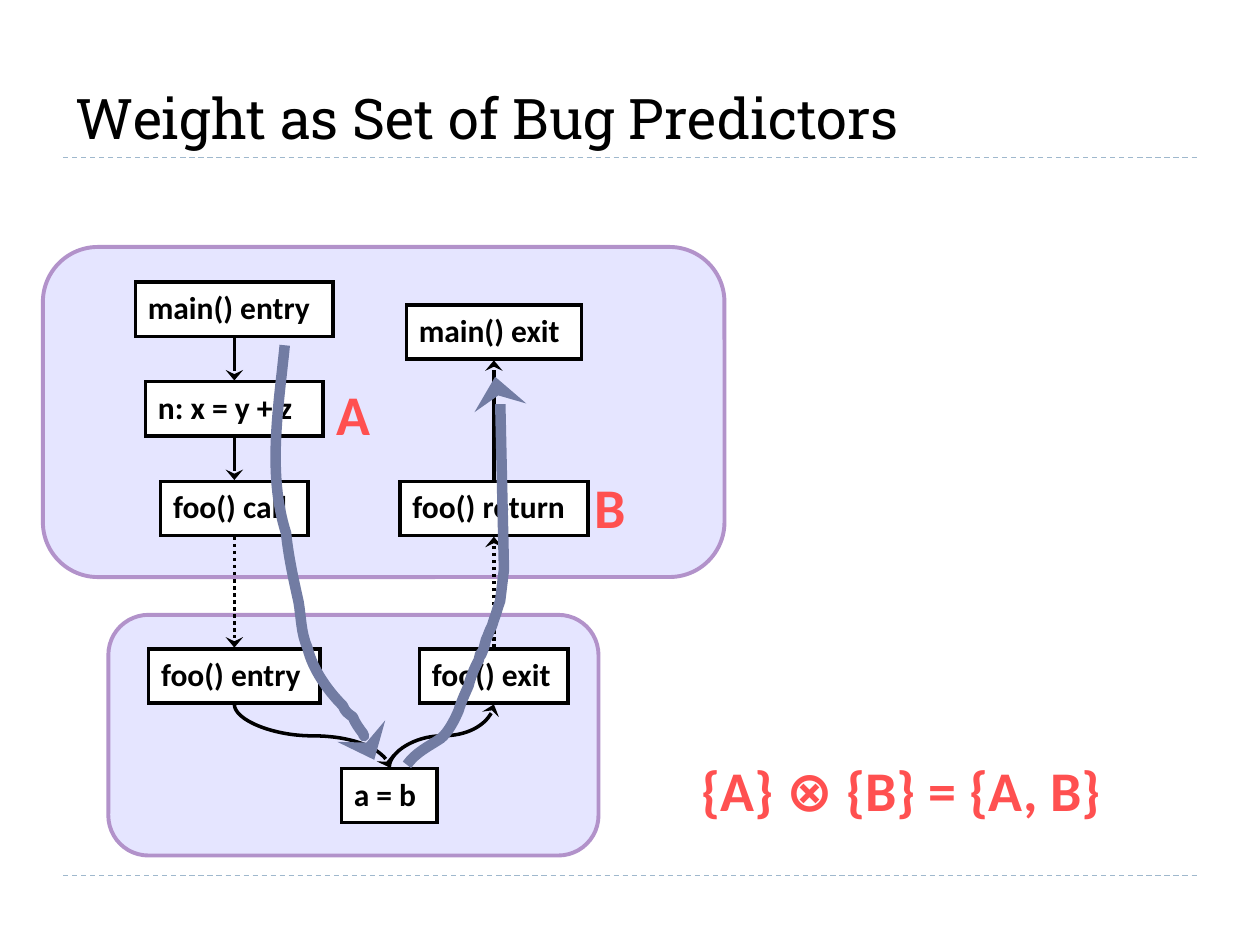
from lxml import etree
from pptx import Presentation
from pptx.dml.color import RGBColor
from pptx.enum.dml import MSO_LINE
from pptx.enum.shapes import MSO_CONNECTOR, MSO_SHAPE
from pptx.enum.text import MSO_ANCHOR, MSO_AUTO_SIZE, PP_ALIGN
from pptx.oxml.ns import qn
from pptx.util import Inches, Pt

STRAIGHT, CURVE = MSO_CONNECTOR.STRAIGHT, MSO_CONNECTOR.CURVE
DASH, DOT = MSO_LINE.DASH, MSO_LINE.ROUND_DOT
BLACK, WHITE, RED = "000000", "FFFFFF", "FF5050"
LILAC, PURPLE, SLATE, RULE = "CCCCFF", "B292CA", "727CA3", "9FB8CD"

# Content
TITLE = "Weight as Set of Bug Predictors"
RULES = [6.95, 1.25]
PANELS = [(0.34, 1.96, 5.41, 2.62), (0.86, 4.88, 3.89, 1.91)]
LEFT, MID, RIGHT, TALL = 1.86, 3.09, 3.92, 0.43
NODES = {  # text: centre, top, width
    "main() entry": (LEFT, 2.24, 1.57),
    "n: x = y + z": (LEFT, 3.03, 1.41),
    "foo() call": (LEFT, 3.82, 1.17),
    "foo() return": (RIGHT, 3.82, 1.49),
    "main() exit": (RIGHT, 2.42, 1.39),
    "foo() entry": (LEFT, 5.15, 1.36),
    "foo() exit": (RIGHT, 5.15, 1.18),
    "a = b": (MID, 6.1, 0.76),
}
EDGES = [
    ("main() entry", "n: x = y + z", None),
    ("n: x = y + z", "foo() call", None),
    ("foo() call", "foo() entry", DOT),
    ("foo() exit", "foo() return", DOT),
    ("foo() return", "main() exit", None),
    ("foo() entry", "a = b", None),
    ("a = b", "foo() exit", None),
]
LABELS = [
    ("{A} ⊗ {B} = {A, B}", 5.47, 5.95, 3.75),
    ("A", 2.57, 2.96, 0.52),
    ("B", 4.62, 3.7, 0.5),
]
# Each path is a start point, then Bezier steps of two handles and an end
PATHS = [
    [(2.26, 2.74),
     (2.21, 3.24), (2.12, 3.76), (2.27, 4.23),
     (2.29, 4.42), (2.33, 4.6), (2.37, 4.78),
     (2.39, 4.9), (2.39, 5.03), (2.44, 5.14),
     (2.48, 5.31), (2.6, 5.48), (2.72, 5.6),
     (2.74, 5.65), (2.76, 5.66), (2.8, 5.69),
     (2.82, 5.74), (2.85, 5.78), (2.88, 5.82),
     (2.9, 5.87), (2.91, 5.91), (2.93, 5.95),
     (2.95, 5.98), (2.94, 6.01), (2.97, 6.03)],
    [(3.23, 6.07),
     (3.3, 5.97), (3.41, 5.92), (3.5, 5.86),
     (3.56, 5.81), (3.61, 5.71), (3.64, 5.64),
     (3.66, 5.57), (3.69, 5.51), (3.72, 5.44),
     (3.73, 5.39), (3.77, 5.29), (3.8, 5.24),
     (3.83, 5.11), (3.79, 5.27), (3.83, 5.17),
     (3.85, 5.13), (3.85, 5.08), (3.87, 5.05),
     (3.91, 4.94), (3.89, 5.02), (3.92, 4.92),
     (3.94, 4.87), (3.95, 4.82), (3.97, 4.77),
     (3.98, 4.69), (3.99, 4.6), (4, 4.52),
     (3.99, 4.06), (3.98, 3.63), (3.97, 3.16),
     (3.97, 3.1), (3.93, 3.05), (3.93, 2.99)],
]


def paint(part, color):
    """Give a fill or a line one solid colour."""
    part.solid()
    part.fore_color.rgb = RGBColor.from_string(color)


def stroke(shape, color, width, dash=None, head=False):
    paint(shape.line.fill, color)
    shape.line.width = Pt(width)
    if dash:
        shape.line.dash_style = dash
    ln = shape.line._get_or_add_ln()
    if head:
        etree.SubElement(ln, qn("a:round"))
        etree.SubElement(ln, qn("a:tailEnd"), type="stealth", w="lg", len="med")
    else:
        etree.SubElement(ln, qn("a:miter"), lim="800000")


def write(shape, text, size, color, font="Calibri", bold=True):
    frame = shape.text_frame
    frame.text = text
    para = frame.paragraphs[0]
    para.alignment = PP_ALIGN.LEFT
    face = para.runs[0].font
    face.name, face.size, face.bold = font, Pt(size), bold
    face.color.rgb = RGBColor.from_string(color)


def fit(shape):
    frame = shape.text_frame
    frame.word_wrap = False
    frame.auto_size = MSO_AUTO_SIZE.SHAPE_TO_FIT_TEXT
    frame.vertical_anchor = MSO_ANCHOR.TOP


def add_box(kind, place, fill, edge, width):
    box = shapes.add_shape(kind, *map(Inches, place))
    box.shadow.inherit = False
    paint(box.fill, fill)
    stroke(box, edge, width)
    return box


def add_line(kind, start, end, *style):
    line = shapes.add_connector(kind, *map(Inches, start + end))
    stroke(line, *style)
    etree.SubElement(line._element.spPr, qn("a:effectLst"))
    return line


def add_curve(start, end, *style):
    """Turn a curved connector by 270 degrees so it leaves vertically."""
    cx, cy = (start[0] + end[0]) / 2, (start[1] + end[1]) / 2
    ends = [(cx - (y - cy), cy + (x - cx)) for x, y in (start, end)]
    line = add_line(CURVE, *ends, *style)
    line._element.spPr.find(qn("a:xfrm")).set("rot", str(270 * 60000))


def add_trail(path):
    """Draw an open outline, then join each three steps into one Bezier."""
    dots = [(Inches(x), Inches(y)) for x, y in path]
    pen = shapes.build_freeform(*dots[0])
    pen.add_line_segments(dots[1:], close=False)
    trail = pen.convert_to_shape()
    route = next(trail._element.iter(qn("a:path")))
    steps = route.findall(qn("a:lnTo"))
    for i in range(0, len(steps), 3):
        bend = etree.SubElement(route, qn("a:cubicBezTo"))
        for step in steps[i:i + 3]:
            bend.append(step[0])
            route.remove(step)
    return trail


deck = Presentation()
deck.slide_width, deck.slide_height = Inches(10), Inches(7.5)
slide = deck.slides.add_slide(deck.slide_layouts[5])
shapes = slide.shapes

# Title
title = shapes.title
title.left, title.top, title.width, title.height = map(Inches, (0.5, 0.17, 9, 1.08))
write(title, TITLE, 32, BLACK, "Roboto Slab", False)
title.text_frame.vertical_anchor = MSO_ANCHOR.BOTTOM
title.text_frame.auto_size = MSO_AUTO_SIZE.NONE

# Rules and panels
for y in RULES:
    add_line(STRAIGHT, (0.5, y), (9.5, y), RULE, 0.75, DASH)
for place in PANELS:
    panel = add_box(MSO_SHAPE.ROUNDED_RECTANGLE, place, LILAC, PURPLE, 2.25)
    tint = panel._element.spPr.find(qn("a:solidFill"))[0]
    etree.SubElement(tint, qn("a:alpha"), val="50000")

# Flow graph
for text, (mid, top, wide) in NODES.items():
    node = add_box(MSO_SHAPE.RECTANGLE, (mid - wide / 2, top, wide, TALL), WHITE, BLACK, 2)
    write(node, text, 18, BLACK)
    fit(node)
for tail, tip, dash in EDGES:
    (x1, y1, _), (x2, y2, _) = NODES[tail], NODES[tip]
    down = y1 < y2
    start = (x1, y1 + TALL + 0.01 if down else y1 - 0.01)
    end = (x2, y2 - 0.01 if down else y2 + TALL + 0.01)
    draw = add_curve
    if x1 == x2:
        add_line(STRAIGHT, start, end, BLACK, 2, dash, True)
    else:
        add_curve(start, end, BLACK, 2, dash, True)

# Predictor labels
for text, x, y, wide in LABELS:
    label = shapes.add_textbox(*map(Inches, (x, y, wide, 0.63)))
    write(label, text, 32, RED)
    fit(label)

# Execution paths
for path in PATHS:
    trail = add_trail(path)
    trail.shadow.inherit = False
    trail.fill.background()
    stroke(trail, SLATE, 6, None, True)

deck.save("out.pptx")
